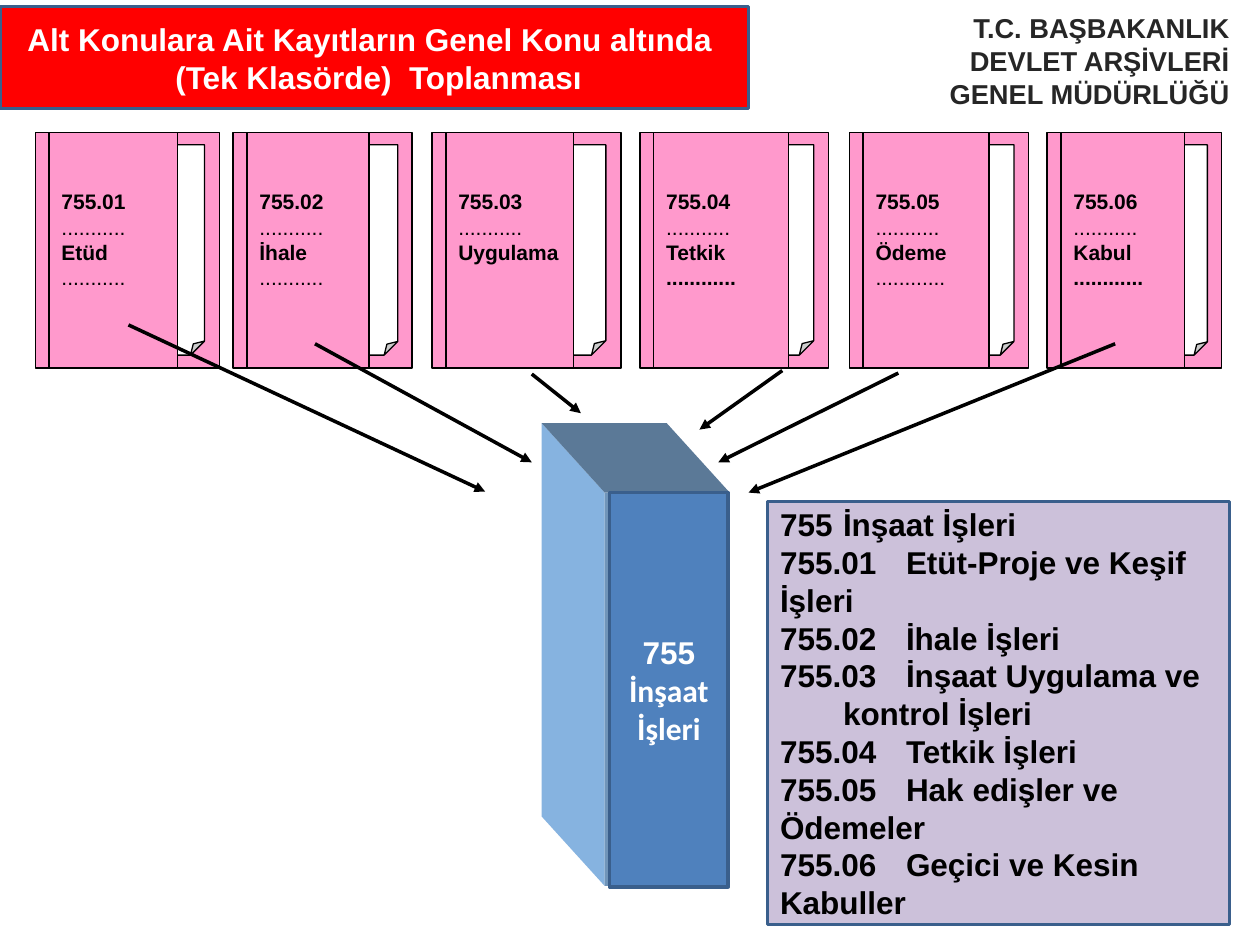
import pptx
import pptx.dml.color
import pptx.enum.shapes
import pptx.enum.text
import pptx.oxml.ns
import pptx.util
from lxml import etree

Cm, Pt = pptx.util.Cm, pptx.util.Pt
SHAPE = pptx.enum.shapes.MSO_SHAPE
ALIGN = pptx.enum.text.PP_ALIGN
ANCHOR = pptx.enum.text.MSO_ANCHOR
qn = pptx.oxml.ns.qn

COLORS = {
    "black": "000000", "white": "FFFFFF", "pink": "FF99CC", "red": "FF0000",
    "lilac": "CCC1DA", "border": "3A5F8C", "heading": "262626",
    "binder": "4F81BD", "side": "86B3E0", "top": "5B7997", "spine": "7095BA",
}

# left, width, cover width (cm), code, subject, dots under the code and
# under the subject, whether the last dots are bold
FOLDERS = [
    (0.71, 3.71, 2.59, "755.01", "Etüd", 11, 11, False),
    (4.70, 3.61, 2.46, "755.02", "İhale", 11, 11, False),
    (8.71, 3.81, 2.57, "755.03", "Uygulama", 11, 0, False),
    (12.90, 3.81, 2.72, "755.04", "Tetkik", 11, 12, True),
    (17.12, 3.61, 2.54, "755.05", "Ödeme", 11, 12, False),
    (21.11, 3.51, 2.49, "755.06", "Kabul", 11, 12, True),
]
FOLDER_TOP, FOLDER_HEIGHT = 2.67, 4.75

# start x, start y, end x, end y (cm), from each folder to the binder
ARROWS = [
    (2.59, 6.55, 9.78, 9.91), (6.35, 6.93, 10.72, 9.32),
    (10.72, 7.54, 11.71, 8.33), (15.77, 7.47, 14.10, 8.66),
    (18.11, 7.52, 14.48, 9.32), (22.48, 6.93, 15.09, 9.93),
]

FILE_PLAN = [
    "755\tİnşaat İşleri",
    "755.01\tEtüt-Proje ve Keşif \tİşleri",
    "755.02\tİhale İşleri",
    "755.03\tİnşaat Uygulama ve",
    " \tkontrol İşleri",
    "755.04\tTetkik İşleri",
    "755.05\tHak edişler ve \tÖdemeler",
    "755.06\tGeçici ve Kesin  \tKabuller",
]


def rgb(name):
    return pptx.dml.color.RGBColor.from_string(COLORS[name])


def paint(shape, fill, line=None, width=0.75):
    shape.shadow.inherit = False
    shape.fill.solid()
    shape.fill.fore_color.rgb = rgb(fill)
    if line:
        shape.line.color.rgb = rgb(line)
        shape.line.width = Pt(width)
    else:
        shape.line.fill.background()


def write_text(shape, lines, size=18, color="black", align=ALIGN.LEFT,
               anchor=ANCHOR.MIDDLE, bold=None, fonts=None):
    """Write one paragraph per line; bold and fonts hold one value per line."""
    frame = shape.text_frame
    frame.word_wrap = True
    frame.auto_size = pptx.enum.text.MSO_AUTO_SIZE.NONE
    frame.vertical_anchor = anchor
    for i, line in enumerate(lines):
        paragraph = frame.paragraphs[0] if i == 0 else frame.add_paragraph()
        paragraph.alignment = align
        paragraph.space_before = Pt(0)
        run = paragraph.add_run()
        run.text = line
        run.font.name = fonts[i] if fonts else "Arial"
        run.font.size = Pt(size)
        run.font.bold = bold[i] if bold else True
        run.font.color.rgb = rgb(color)


def place(shape, left, top, width, height):
    shape.left, shape.top = Cm(left), Cm(top)
    shape.width, shape.height = Cm(width), Cm(height)


def add_box(shapes, box, fill, line=None, width=0.75, kind=SHAPE.RECTANGLE):
    shape = shapes.add_shape(kind, *map(Cm, box))
    paint(shape, fill, line, width)
    return shape


def add_face(shapes, corners, fill):
    points = [(Cm(x), Cm(y)) for x, y in corners]
    builder = shapes.build_freeform(*points[0])
    builder.add_line_segments(points[1:], close=True)
    paint(builder.convert_to_shape(), fill)


def add_folder(slide, left, width, cover_width, code, subject,
               code_dots, subject_dots, last_bold):
    parts = slide.shapes.add_group_shape().shapes
    add_box(parts, (left, FOLDER_TOP, width, FOLDER_HEIGHT), "pink", "black")
    page = add_box(parts, (left + 0.31 * width, FOLDER_TOP + 0.25,
                           0.61 * width, FOLDER_HEIGHT - 0.51),
                   "white", "black", kind=SHAPE.FOLDED_CORNER)
    # Size of the folded corner, one eighth of the page width
    geometry = page._element.spPr.find(qn("a:prstGeom"))
    etree.SubElement(geometry.find(qn("a:avLst")), qn("a:gd"),
                     name="adj", fmla="val 12500")
    cover = add_box(parts, (left + 0.28, FOLDER_TOP, cover_width, FOLDER_HEIGHT),
                    "pink", "black")
    lines = [code, "." * code_dots, subject]
    if subject_dots:
        lines.append("." * subject_dots)
    write_text(cover, lines, size=12, anchor=ANCHOR.TOP,
               bold=[True, False, True, last_bold])
    cover.text_frame.margin_top = Cm(1.14)


def add_arrow(slide, *ends):
    arrow = slide.shapes.add_connector(
        pptx.enum.shapes.MSO_CONNECTOR.STRAIGHT, *map(Cm, ends))
    arrow.line.color.rgb = rgb("black")
    arrow.line.width = Pt(2)
    properties = arrow._element.spPr
    etree.SubElement(properties.find(qn("a:ln")), qn("a:tailEnd"), type="triangle")
    etree.SubElement(properties, qn("a:effectLst"))


def add_binder(slide):
    parts = slide.shapes.add_group_shape().shapes
    back, edge, right = 10.92, 12.19, 14.71
    add_face(parts, [(edge, 9.93), (edge, 17.86), (back, 16.46), (back, 8.53)], "side")
    add_face(parts, [(right, 9.93), (edge, 9.93), (back, 8.53), (13.44, 8.53)], "top")
    add_box(parts, (edge, 9.93, right - edge, 7.93), "spine")
    label = add_box(slide.shapes, (12.29, 9.93, 2.39, 7.95), "binder", "border", 2)
    write_text(label, ["755", "İnşaat", "İşleri"], color="white",
               align=ALIGN.CENTER, fonts=["Arial", "Calibri", "Calibri"])


def fill_title(title):
    place(title, 0, 0.13, 15.09, 2.06)
    paint(title, "red", "border", 2)
    write_text(title, ["Alt Konulara Ait Kayıtların Genel Konu altında ",
                       " (Tek Klasörde)  Toplanması"],
               color="white", align=ALIGN.CENTER)


def fill_file_plan(plan):
    place(plan, 15.47, 10.11, 9.32, 8.53)
    paint(plan, "lilac", "border", 2)
    write_text(plan, FILE_PLAN)
    for paragraph in plan.text_frame.paragraphs:
        properties = paragraph._p.get_or_add_pPr()
        properties.set("marL", "0")
        properties.set("indent", "0")
        etree.SubElement(properties, qn("a:buNone"))


def main():
    deck = pptx.Presentation()
    deck.slide_width, deck.slide_height = Cm(25.4), Cm(19.05)
    slide = deck.slides.add_slide(deck.slide_layouts[1])

    # Title and institution
    fill_title(slide.shapes.title)
    institution = add_box(slide.shapes, (16.71, 0.1, 8.33, 2.24), "white", "white")
    write_text(institution, ["T.C. BAŞBAKANLIK", "DEVLET ARŞİVLERİ", "GENEL MÜDÜRLÜĞÜ"],
               size=15.6, color="heading", align=ALIGN.RIGHT)

    # Folders gathered into one binder
    for folder in FOLDERS:
        add_folder(slide, *folder)
    for ends in ARROWS:
        add_arrow(slide, *ends)
    add_binder(slide)

    # File plan list
    fill_file_plan(slide.placeholders[1])
    deck.save("out.pptx")


if __name__ == "__main__":
    main()
